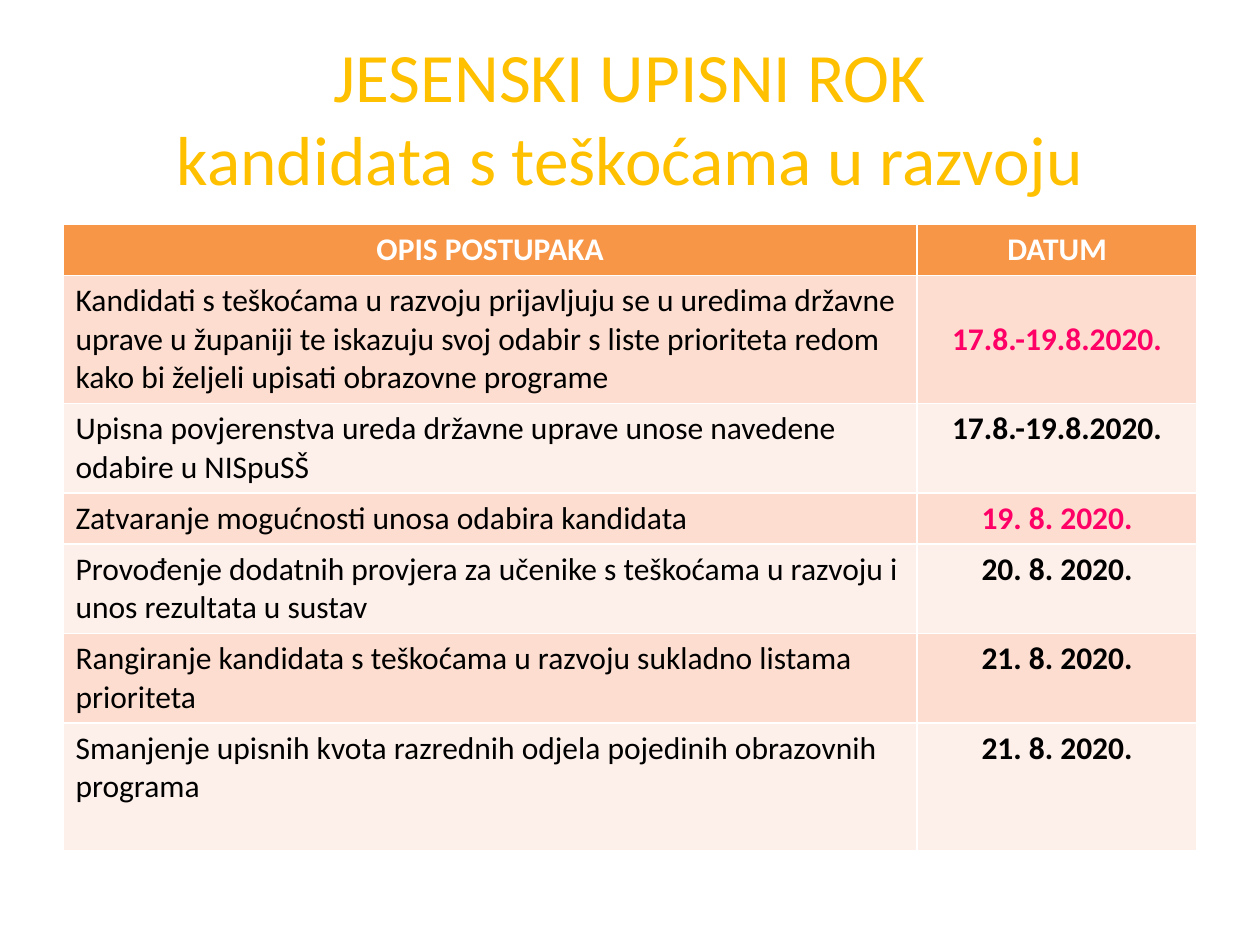
"""Build the slide with the autumn enrolment schedule."""
from typing import NamedTuple

from pptx import Presentation
from pptx.dml.color import RGBColor
from pptx.enum.text import MSO_ANCHOR, MSO_AUTO_SIZE, PP_ALIGN
from pptx.util import Cm, Pt

LEFT, CENTER = PP_ALIGN.LEFT, PP_ALIGN.CENTER
TOP, MIDDLE = MSO_ANCHOR.TOP, MSO_ANCHOR.MIDDLE
NO_AUTOFIT = MSO_AUTO_SIZE.NONE

FONT = "Calibri"
GOLD, ORANGE, PINK = "FFC000", "F79646", "FF0066"
WHITE, BLACK = "FFFFFF", "000000"
BANDS = ("FCDDCF", "FDEFE9")
MARGIN, CONTENT_WIDTH = Cm(1.27), Cm(22.86)
COLUMN_WIDTHS = (Cm(17.22), Cm(5.64))
HEADER_HEIGHT = Cm(1.02)


class Step(NamedTuple):
    description: str
    date: str
    height: float
    date_color: str = BLACK
    date_anchor: MSO_ANCHOR = TOP


STEPS = (
    Step("Kandidati s teškoćama u razvoju prijavljuju se u uredima državne uprave u županiji "
         "te iskazuju svoj odabir s liste prioriteta redom kako bi željeli upisati obrazovne "
         "programe", "17.8.-19.8.2020.", 2.58, PINK, MIDDLE),
    Step("Upisna povjerenstva ureda državne uprave unose navedene odabire u NISpuSŠ",
         "17.8.-19.8.2020.", 1.8),
    Step("Zatvaranje mogućnosti unosa odabira kandidata", "19. 8. 2020.", 1.03, PINK),
    Step("Provođenje dodatnih provjera za učenike s teškoćama u razvoju i unos rezultata u sustav",
         "20. 8. 2020.", 1.8),
    Step("Rangiranje kandidata s teškoćama u razvoju sukladno listama prioriteta",
         "21. 8. 2020.", 1.8),
    Step("Smanjenje upisnih kvota razrednih odjela pojedinih obrazovnih programa",
         "21. 8. 2020.", 2.57),
)


def rgb(value: str) -> RGBColor:
    return RGBColor.from_string(value)


def style_paragraph(paragraph, size: float, color: str, align: PP_ALIGN, bold: bool) -> None:
    paragraph.alignment = align
    font = paragraph.font
    font.name, font.size, font.bold = FONT, Pt(size), bold
    font.color.rgb = rgb(color)


def fill_cell(cell, text: str, fill: str, color: str = BLACK, align: PP_ALIGN = CENTER,
              bold: bool = True, anchor: MSO_ANCHOR = TOP) -> None:
    cell.text = text
    cell.vertical_anchor = anchor
    cell.fill.solid()
    cell.fill.fore_color.rgb = rgb(fill)
    style_paragraph(cell.text_frame.paragraphs[0], 18, color, align, bold)


def add_title(page) -> None:
    title = page.shapes.title
    title.left, title.top, title.width, title.height = MARGIN, Cm(0.76), CONTENT_WIDTH, Cm(3.18)
    frame = title.text_frame
    frame.text = "JESENSKI UPISNI ROK\vkandidata s teškoćama u razvoju"
    frame.auto_size = NO_AUTOFIT
    frame.vertical_anchor = MIDDLE
    style_paragraph(frame.paragraphs[0], 39.6, GOLD, CENTER, False)


def add_schedule(page) -> None:
    heights = [HEADER_HEIGHT] + [Cm(step.height) for step in STEPS]
    table = page.shapes.add_table(len(heights), len(COLUMN_WIDTHS), MARGIN, Cm(4.52),
                                  CONTENT_WIDTH, sum(heights)).table
    for column, width in zip(table.columns, COLUMN_WIDTHS):
        column.width = width
    for row, height in zip(table.rows, heights):
        row.height = height
    for index, heading in enumerate(("OPIS POSTUPAKA", "DATUM")):
        fill_cell(table.cell(0, index), heading, ORANGE, WHITE)
    for index, step in enumerate(STEPS):
        band = BANDS[index % len(BANDS)]
        fill_cell(table.cell(index + 1, 0), step.description, band, align=LEFT, bold=False)
        fill_cell(table.cell(index + 1, 1), step.date, band, step.date_color,
                  anchor=step.date_anchor)


def main() -> None:
    deck = Presentation()
    deck.slide_width, deck.slide_height = Cm(25.4), Cm(19.05)
    page = deck.slides.add_slide(deck.slide_layouts[5])
    add_title(page)
    add_schedule(page)
    deck.save("out.pptx")


if __name__ == "__main__":
    main()
